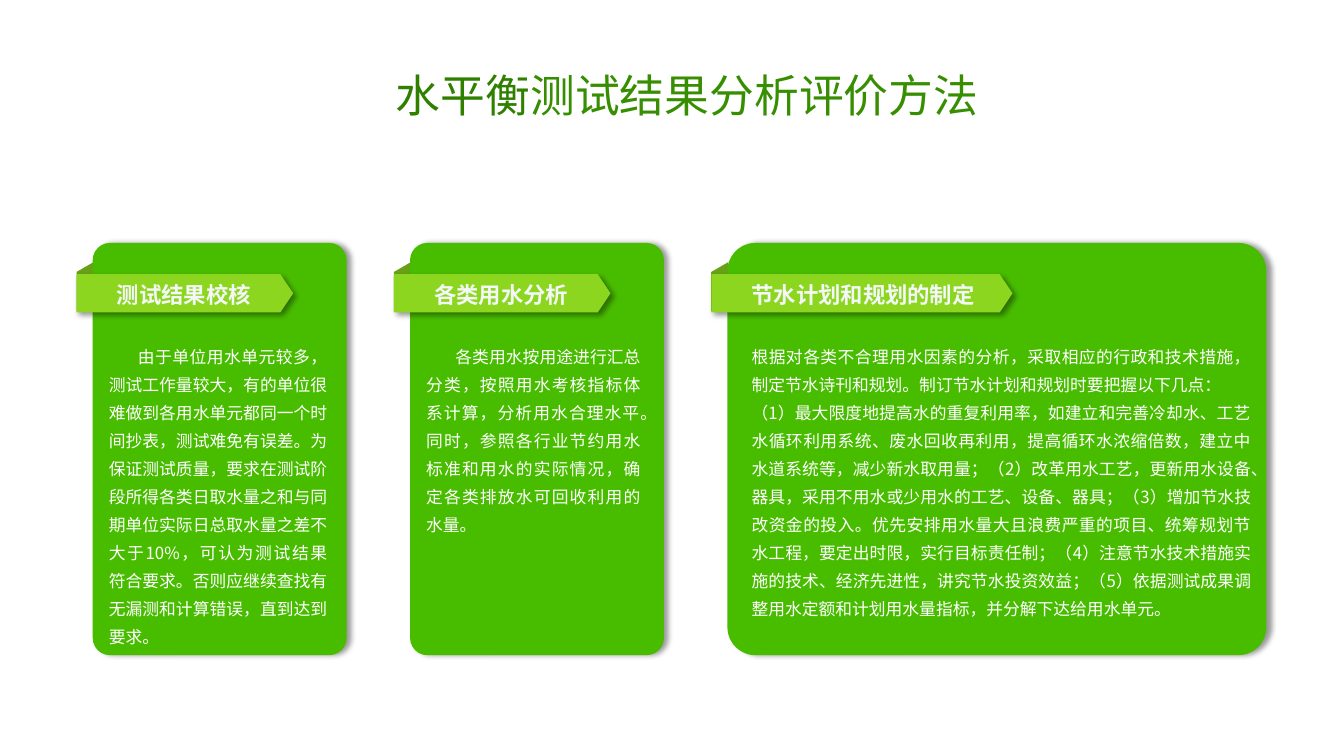
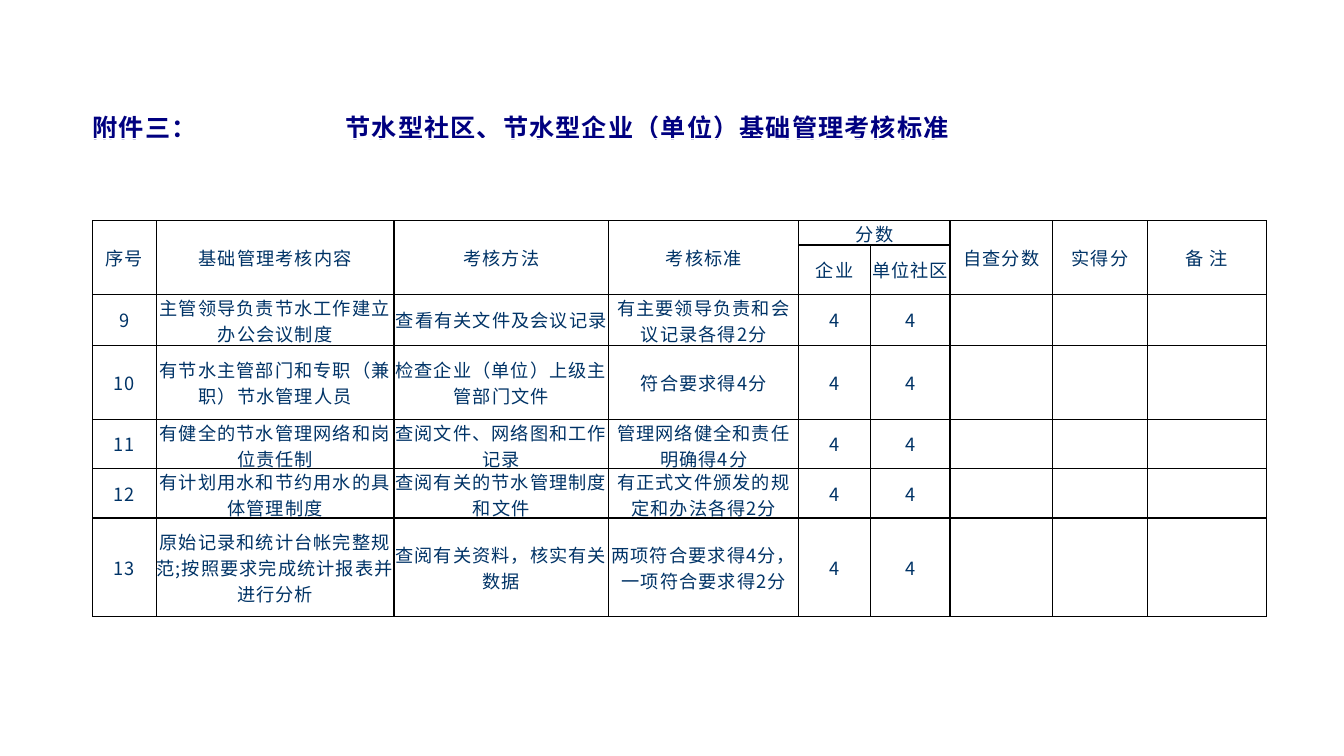
from dataclasses import dataclass

from lxml.etree import SubElement as Sub
from pptx import Presentation
from pptx.dml.color import RGBColor as RGB
from pptx.enum.shapes import MSO_SHAPE as Shape
from pptx.enum.text import MSO_ANCHOR as Anchor
from pptx.enum.text import MSO_AUTO_SIZE as Fit
from pptx.enum.text import PP_ALIGN as Align
from pptx.oxml.ns import qn
from pptx.util import Inches, Pt


@dataclass(frozen=True)
class Theme:
    cjk: str = "Noto Sans CJK SC"
    serif: str = "Times New Roman"
    card: str = "48BD00"
    ribbon: str = "8CD620"
    fold: str = "69A018"
    body: str = "FFFFFF"
    label: str = "F3F7F6"
    dark: str = "308000"
    title: str = "368E00"
    navy: str = "000080"
    cell: str = "003366"
    rule: str = "000000"
    title_pt: int = 32
    head_pt: int = 18
    label_pt: int = 16
    cell_pt: int = 13
    body_pt: int = 12


T = Theme()

PANELS = [
    (2.52, 2.15, 0.16, 2.17, 0.29, "测试结果校核", [
        "由于单位用水单元较多，测试工作量较大，有的单位很难做到各用水单元都同一个时间抄表，测试难免有误差。"
        "为保证测试质量，要求在测试阶段所得各类日取水量之和与同期单位实际日总取水量之差不大于10%，"
        "可认为测试结果符合要求。否则应继续查找有无漏测和计算错误，直到达到要求。"]),
    (2.52, 2.15, 0.16, 2.13, 0.29, "各类用水分析", [
        "各类用水按用途进行汇总分类，按照用水考核指标体系计算，分析用水合理水平。"
        "同时，参照各行业节约用水标准和用水的实际情况，确定各类排放水可回收利用的水量。"]),
    (5.35, 2.99, 0.24, 4.96, 0, "节水计划和规划的制定", [
        "根据对各类不合理用水因素的分析，采取相应的行政和技术措施，制定节水诗刊和规划。"
        "制订节水计划和规划时要把握以下几点：",
        "（1）最大限度地提高水的重复利用率，如建立和完善冷却水、工艺水循环利用系统、废水回收再利用，"
        "提高循环水浓缩倍数，建立中水道系统等，减少新水取用量；"
        "（2）改革用水工艺，更新用水设备、器具，采用不用水或少用水的工艺、设备、器具；"
        "（3）增加节水技改资金的投入。优先安排用水量大且浪费严重的项目、统筹规划节水工程，"
        "要定出时限，实行目标责任制；"
        "（4）注意节水技术措施实施的技术、经济先进性，讲究节水投资效益；"
        "（5）依据测试成果调整用水定额和计划用水量指标，并分解下达给用水单元。"]),
]

COLS = [0.63, 2.36, 2.13, 1.89, 0.71, 0.79, 1.02, 0.94, 1.18]
ROWS = [0.24, 0.49, 0.51, 0.73, 0.49, 0.49, 0.98]
HEADS = ["序号", "基础管理考核内容", "考核方法", "考核标准", "分数", "",
         "自查分数", "实得分", "备 注"]
SUBS = ["", "", "", "", "企业", "单位社区"]
ITEMS = [
    ["9", "主管领导负责节水工作建立办公会议制度", "查看有关文件及会议记录",
     "有主要领导负责和会议记录各得2分", "4", "4"],
    ["10", "有节水主管部门和专职（兼职）节水管理人员", "检查企业（单位）上级主管部门文件",
     "符合要求得4分", "4", "4"],
    ["11", "有健全的节水管理网络和岗位责任制", "查阅文件、网络图和工作记录",
     "管理网络健全和责任明确得4分", "4", "4"],
    ["12", "有计划用水和节约用水的具体管理制度", "查阅有关的节水管理制度和文件",
     "有正式文件颁发的规定和办法各得2分", "4", "4"],
    ["13", "原始记录和统计台帐完整规范;按照要求完成统计报表并进行分析",
     "查阅有关资料，核实有关数据", "两项符合要求得4分，一项符合要求得2分", "4", "4"],
]


def style(run, size, tone, bold=False, face=T.cjk, gap=0):
    font = run.font
    font.size, font.bold, font.name = Pt(size), bold, face
    font.color.rgb = RGB.from_string(tone)
    props = run._r.get_or_add_rPr()
    Sub(props, qn("a:ea")).set("typeface", T.cjk)
    if gap:
        props.set("spc", str(round(gap * 100)))


def block(slide, kind, box, tone, angle=None, adj=None):
    shape = slide.shapes.add_shape(kind, *map(Inches, box))
    shape.shadow.inherit = False
    shape.fill.solid()
    shape.fill.fore_color.rgb = RGB.from_string(tone)
    shape.line.fill.background()
    if adj is not None:
        shape.adjustments[0] = adj
    if angle is not None:
        cast(shape, angle)
    return shape


def cast(shape, angle):
    glow = shape._element.spPr.find(qn("a:effectLst"))
    drop = Sub(glow, qn("a:outerShdw"), blurRad=str(Pt(4)), dist=str(Pt(3)),
               dir=str(angle * 60000), algn="ctr", rotWithShape="0")
    tint = Sub(drop, qn("a:srgbClr"), val=T.rule)
    Sub(tint, qn("a:alpha"), val="40000")


def label(slide, box, lines, size, tone, bold=False):
    frame = slide.shapes.add_textbox(*map(Inches, box)).text_frame
    frame.word_wrap = True
    frame.auto_size = Fit.SHAPE_TO_FIT_TEXT
    frame.margin_left = frame.margin_right = 0
    frame.margin_top = frame.margin_bottom = 0
    frame.text = "\n".join(lines)
    for para in frame.paragraphs:
        for run in para.runs:
            style(run, size, tone, bold)
    return frame


def panel(slide, left, data):
    width, band, pad, wide, dent, name, lines = data
    fold = block(slide, Shape.FLOWCHART_DATA, (left - 0.32, 2.76, 0.49, 0.17), T.fold)
    fold.rotation = 270
    fold._element.spPr.xfrm.set("flipH", "1")
    block(slide, Shape.ROUNDED_RECTANGLE, (left, 2.41, width, 4.09), T.card, 0, 0.068)
    block(slide, Shape.PENTAGON, (left - 0.16, 2.72, band, 0.38), T.ribbon, 45, 0.335)
    frame = label(slide, (left + pad, 3.36, wide, 2.8), lines, T.body_pt, T.body)
    for para in frame.paragraphs:
        para.alignment = Align.JUSTIFY
        para.line_spacing = Pt(20)
        props = para._p.get_or_add_pPr()
        props.set("marL", "0")
        props.set("indent", str(Inches(dent)))
    label(slide, (left + 0.24, 2.79, band - 0.63, 0.27), [name], T.label_pt, T.label, True)


def title(slide, *parts):
    frame = label(slide, (3.93, 0.67, 6.18, 0.64), [""], T.title_pt, T.title)
    for text, tone in parts:
        run = frame.paragraphs[0].add_run()
        run.text = text
        style(run, T.title_pt, tone)


def grid(slide, left, top, cols, rows):
    table = slide.shapes.add_table(len(rows), len(cols), Inches(left), Inches(top),
                                   Inches(sum(cols)), Inches(sum(rows))).table
    table.first_row = table.horz_banding = False
    for col, size in zip(table.columns, cols):
        col.width = Inches(size)
    for row, size in zip(table.rows, rows):
        row.height = Inches(size)
    return table


def edge(cell):
    props = cell._tc.get_or_add_tcPr()
    for side in ("lnL", "lnR", "lnT", "lnB"):
        line = Sub(props, qn("a:" + side), w=str(Pt(1)))
        Sub(Sub(line, qn("a:solidFill")), qn("a:srgbClr"), val=T.rule)


def plain(cell, text=""):
    cell.margin_left = cell.margin_right = 0
    cell.margin_top = cell.margin_bottom = 0
    cell.vertical_anchor = Anchor.MIDDLE
    cell.fill.background()
    cell.text_frame.text = text
    return cell.text_frame.paragraphs[0]


def caption(slide, tag, name):
    table = grid(slide, 0.92, 1.07, [8.89], [0.3])
    para = plain(table.cell(0, 0), f"{tag}\t{name}")
    stops = Sub(para._p.get_or_add_pPr(), qn("a:tabLst"))
    Sub(stops, qn("a:tab"), pos=str(Inches(2.51)), algn="l")
    for run in para.runs:
        style(run, T.head_pt, T.navy, True, T.serif, 0.8)


def scores(slide):
    table = grid(slide, 0.92, 2.19, COLS, ROWS)
    for r, texts in enumerate([HEADS, SUBS, *ITEMS]):
        for c in range(len(COLS)):
            cell = table.cell(r, c)
            edge(cell)
            para = plain(cell, texts[c] if c < len(texts) else "")
            para.alignment = Align.CENTER
            for run in para.runs:
                style(run, T.cell_pt, T.cell, gap=0.8)
    for c in (0, 1, 2, 3, 6, 7, 8):
        table.cell(0, c).merge(table.cell(1, c))
    table.cell(0, 4).merge(table.cell(0, 5))


def main():
    deck = Presentation()
    deck.slide_width, deck.slide_height = Inches(13.34), Inches(7.5)
    blank = deck.slide_layouts[6]

    method = deck.slides.add_slide(blank)
    for i, data in enumerate(PANELS):
        panel(method, 0.92 + 3.15 * i, data)
    title(method, ("水平衡", T.dark), ("测试结果分析评价方法", T.title))

    annex = deck.slides.add_slide(blank)
    scores(annex)
    caption(annex, "附件三：", "节水型社区、节水型企业（单位）基础管理考核标准")

    deck.save("out.pptx")


if __name__ == "__main__":
    main()
